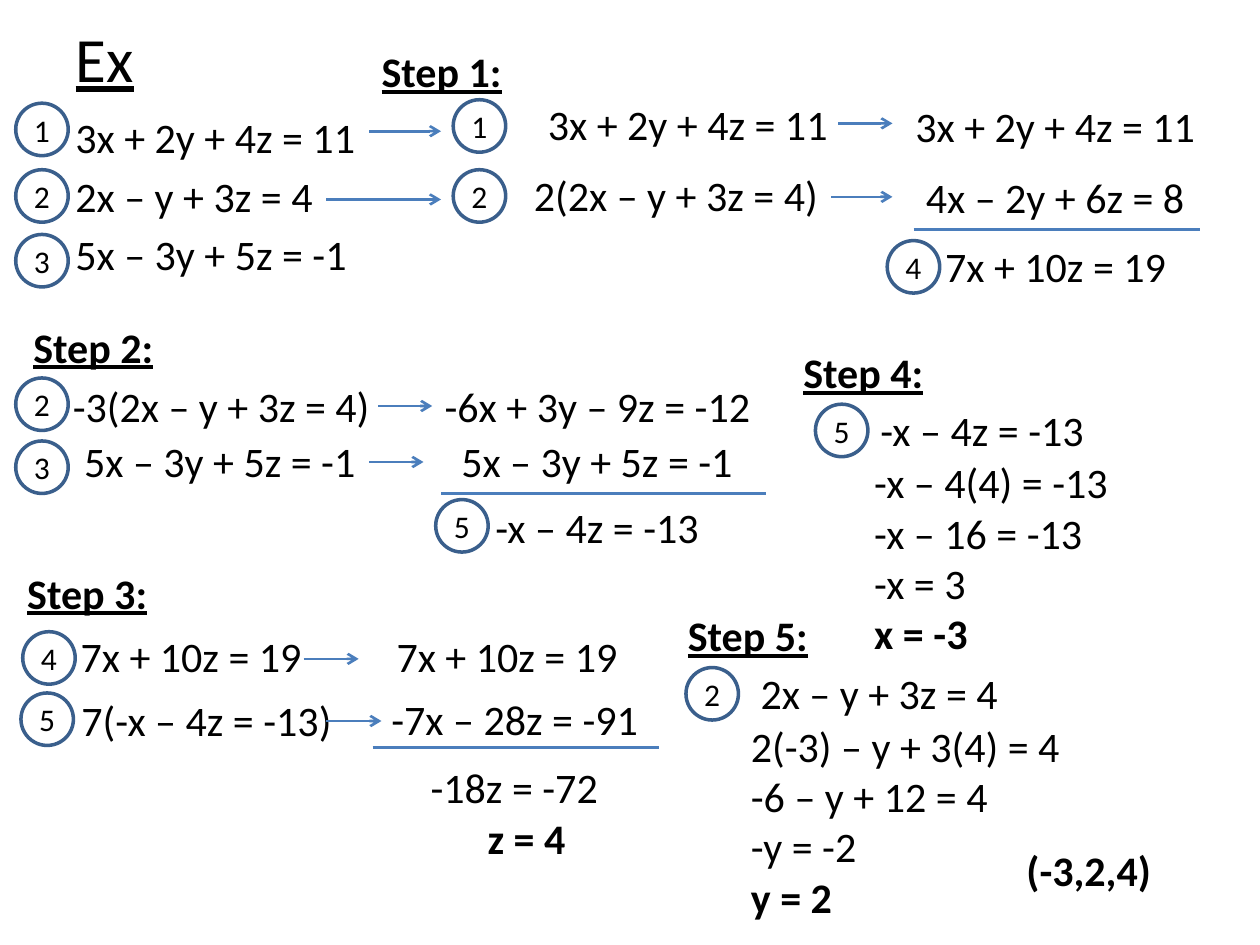
import pptx
import pptx.util
import pptx.dml.color
import pptx.enum.shapes
import pptx.enum.text
import pptx.oxml

Pt = pptx.util.Pt
MSO_ANCHOR = pptx.enum.text.MSO_ANCHOR
PP_ALIGN = pptx.enum.text.PP_ALIGN


def rgb(value):
    return pptx.dml.color.RGBColor.from_string(value)


class Worksheet:
    font = "Calibri"
    ink = "000000"
    ring = "3A5F8C"
    rule = "4B7EBC"
    diameter = 30
    line_height = 36

    def __init__(self, s):
        self.s = s

    def format(self, p, size=24, bold=None, underline=None):
        for r in p.runs:
            r.font.name = self.font
            r.font.size = Pt(size)
            r.font.color.rgb = rgb(self.ink)
            r.font.bold = bold
            r.font.underline = underline

    def title(self, text, x, y, w, h):
        sp = self.s.shapes.title
        sp.left, sp.top, sp.width, sp.height = Pt(x), Pt(y), Pt(w), Pt(h)
        tf = sp.text_frame
        tf.text = text
        tf.vertical_anchor = MSO_ANCHOR.MIDDLE
        p = tf.paragraphs[0]
        p.alignment = PP_ALIGN.LEFT
        self.format(p, size=36, underline=True)

    def text(self, text, x, y, w, h=line_height, bold=None, underline=None,
             gap=0, bold_last=False):
        sp = self.s.shapes.add_textbox(Pt(x), Pt(y), Pt(w), Pt(h))
        tf = sp.text_frame
        tf.text = text
        tf.word_wrap = False
        for p in tf.paragraphs:
            self.format(p, bold=bold, underline=underline)
        for p in tf.paragraphs[1:]:
            p.space_before = Pt(gap)
        if bold_last:
            self.format(tf.paragraphs[-1], bold=True)

    def step(self, number, x, y):
        self.text(f"Step {number}:", x, y, 83.5, bold=True, underline=True)

    def circle(self, number, x, y):
        sp = self.s.shapes.add_shape(
            pptx.enum.shapes.MSO_SHAPE.OVAL,
            Pt(x), Pt(y), Pt(self.diameter), Pt(self.diameter))
        sp.shadow.inherit = False
        sp.fill.background()
        sp.line.color.rgb = rgb(self.ring)
        sp.line.width = Pt(2)
        tf = sp.text_frame
        tf.margin_left = tf.margin_right = tf.margin_top = tf.margin_bottom = 0
        tf.word_wrap = False
        tf.vertical_anchor = MSO_ANCHOR.MIDDLE
        tf.text = str(number)
        p = tf.paragraphs[0]
        p.alignment = PP_ALIGN.CENTER
        self.format(p, size=18)

    def line(self, x1, x2, y, arrow=False):
        sp = self.s.shapes.add_connector(
            pptx.enum.shapes.MSO_CONNECTOR.STRAIGHT, Pt(x1), Pt(y), Pt(x2), Pt(y))
        sp.line.color.rgb = rgb(self.rule)
        sp.line.width = Pt(1.5)
        if arrow:
            tail = pptx.oxml.parse_xml(
                '<a:tailEnd xmlns:a="http://schemas.openxmlformats.org/drawingml/2006/main"'
                ' type="arrow"/>')
            sp.line._get_or_add_ln().append(tail)
        effects = pptx.oxml.parse_xml(
            '<a:effectLst xmlns:a="http://schemas.openxmlformats.org/drawingml/2006/main"/>')
        sp._element.spPr.append(effects)


STEPS = [(1, 211, 22.5), (2, 12, 180), (3, 8.5, 320.5), (4, 452, 194.5), (5, 386, 345)]

CIRCLES = [
    (1, 9, 59), (2, 9, 97), (3, 9, 134),
    (1, 259, 57), (2, 259, 97), (4, 507, 137.5),
    (2, 9, 216), (3, 9, 252), (5, 249, 285.5),
    (4, 13, 361), (5, 12, 396),
    (5, 466, 231), (2, 392, 381.5),
]

EQUATIONS = [
    ("3x + 2y + 4z = 11", 306, 52.5, 175.5),
    ("2(2x – y + 3z = 4)", 298, 93.5, 177),
    ("3x + 2y + 4z = 11", 516, 54, 175.5),
    ("4x – 2y + 6z = 8", 522, 94.5, 163.5),
    ("7x + 10z = 19", 533, 134, 142),
    ("-3(2x – y + 3z = 4)", 34.5, 214, 184.5),
    ("5x – 3y + 5z = -1", 41, 245.5, 170.5),
    ("-6x + 3y – 9z = -12", 247, 214, 191),
    ("5x – 3y + 5z = -1", 256.5, 245.5, 170.5),
    ("-x – 4z = -13", 276, 283, 132.5),
    ("7x + 10z = 19", 39, 357, 142),
    ("7(-x – 4z = -13)", 39.5, 393.5, 160.5),
    ("7x + 10z = 19", 219.5, 357, 142),
    ("-7x – 28z = -91", 216.5, 392.5, 162),
    ("-18z = -72", 239, 431.5, 111),
    ("-x – 4z = -13", 496, 227.5, 132.5),
    ("2x – y + 3z = 4", 427.5, 378, 151),
]

ARROWS = [
    (211, 252, 75), (186.5, 252, 114), (479, 510, 70.5), (475, 510, 112.5),
    (216, 247, 232), (211, 242, 264), (173.5, 205, 376.5), (186.5, 218, 412),
]

SUM_RULES = [(522, 685.5, 131), (252, 438, 282), (213, 376.5, 427)]


def main():
    prs = pptx.Presentation()
    prs.slide_width, prs.slide_height = Pt(720), Pt(540)
    sheet = Worksheet(prs.slides.add_slide(prs.slide_layouts[5]))

    sheet.title("Ex", 36, -12, 648, 90)
    sheet.text("3x + 2y + 4z = 11\n2x – y + 3z = 4\n5x – 3y + 5z = -1",
               36, 60, 175.5, 106, gap=4.8)
    for step in STEPS:
        sheet.step(*step)
    for circle in CIRCLES:
        sheet.circle(*circle)
    for equation in EQUATIONS:
        sheet.text(*equation)
    for arrow in ARROWS:
        sheet.line(*arrow, arrow=True)
    for rule in SUM_RULES:
        sheet.line(*rule)

    sheet.text("-x – 4(4) = -13\n-x – 16 = -13\n-x = 3\nx = -3",
               492.5, 257.5, 150, 124, bold_last=True)
    sheet.text("2(-3) – y + 3(4) = 4\n-6 – y + 12 = 4\n-y = -2\ny = 2",
               422, 408, 192, 124, bold_last=True)
    sheet.text("z = 4", 271.5, 460.5, 59, bold=True)
    sheet.text("(-3,2,4)", 579.5, 479, 86.5, bold=True)

    prs.save("out.pptx")


if __name__ == "__main__":
    main()
